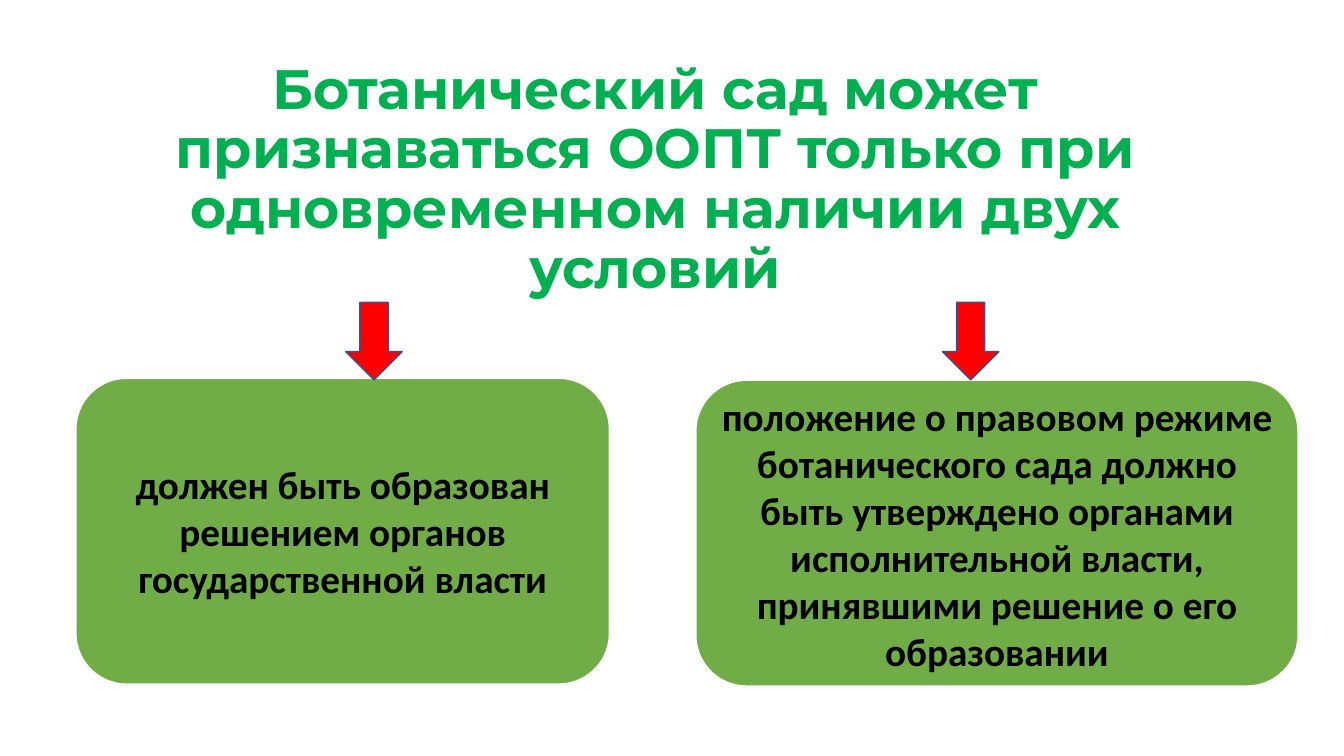
from dataclasses import dataclass

from pptx import Presentation
from pptx.dml.color import RGBColor
from pptx.enum import shapes, text
from pptx.util import Pt


@dataclass(frozen=True)
class Theme:
    title_color: str = "00B050"
    box_fill: str = "70AD47"
    box_line: str = "FFFFFF"
    box_text: str = "000000"
    arrow_fill: str = "FF0000"
    arrow_line: str = "325491"
    title_font: str = "Montserrat"
    box_font: str = "Calibri"
    title_size: float = 39.6
    box_size: float = 28


theme = Theme()


def write_text(shape, wording, *, font, size, color, spacing=1.0):
    """Fill a shape with one bold paragraph, centred both ways."""
    frame = shape.text_frame
    frame.word_wrap = True
    frame.auto_size = text.MSO_AUTO_SIZE.NONE
    frame.vertical_anchor = text.MSO_ANCHOR.MIDDLE
    para = frame.paragraphs[0]
    para.alignment = text.PP_ALIGN.CENTER
    para.line_spacing = spacing
    span = para.add_run()
    span.text = wording
    span.font.name = font
    span.font.size = Pt(size)
    span.font.bold = True
    span.font.color.rgb = RGBColor.from_string(color)


def add_block(page, kind, place, *, fill, line, weight):
    block = page.shapes.add_shape(kind, *map(Pt, place))
    block.shadow.inherit = False
    block.fill.solid()
    block.fill.fore_color.rgb = RGBColor.from_string(fill)
    block.line.color.rgb = RGBColor.from_string(line)
    block.line.width = Pt(weight)
    return block


deck = Presentation()
deck.slide_width, deck.slide_height = Pt(960), Pt(540)
page = deck.slides.add_slide(deck.slide_layouts[5])

title = page.shapes.title
title.left, title.top, title.width, title.height = map(Pt, (54, 77, 828, 104.4))
write_text(
    title,
    "Ботанический сад может признаваться ООПТ только при одновременном наличии двух условий",
    font=theme.title_font, size=theme.title_size, color=theme.title_color, spacing=0.9,
)

# Each condition: box left, top and width, arrow left, wording
conditions = [
    (54, 270, 381.6, 247,
     "должен быть образован решением органов государственной власти"),
    (496.8, 271.4, 430.6, 673.2,
     "положение о правовом режиме ботанического сада должно быть утверждено "
     "органами исполнительной власти, принявшими решение о его образовании"),
]

for left, top, width, _, wording in conditions:
    box = add_block(page, shapes.MSO_SHAPE.ROUNDED_RECTANGLE, (left, top, width, 218.9),
                    fill=theme.box_fill, line=theme.box_line, weight=1.5)
    write_text(box, wording, font=theme.box_font, size=theme.box_size, color=theme.box_text)

for _, _, _, arrow_left, _ in conditions:
    add_block(page, shapes.MSO_SHAPE.DOWN_ARROW, (arrow_left, 216, 40.3, 55.4),
              fill=theme.arrow_fill, line=theme.arrow_line, weight=1)

deck.save("out.pptx")
